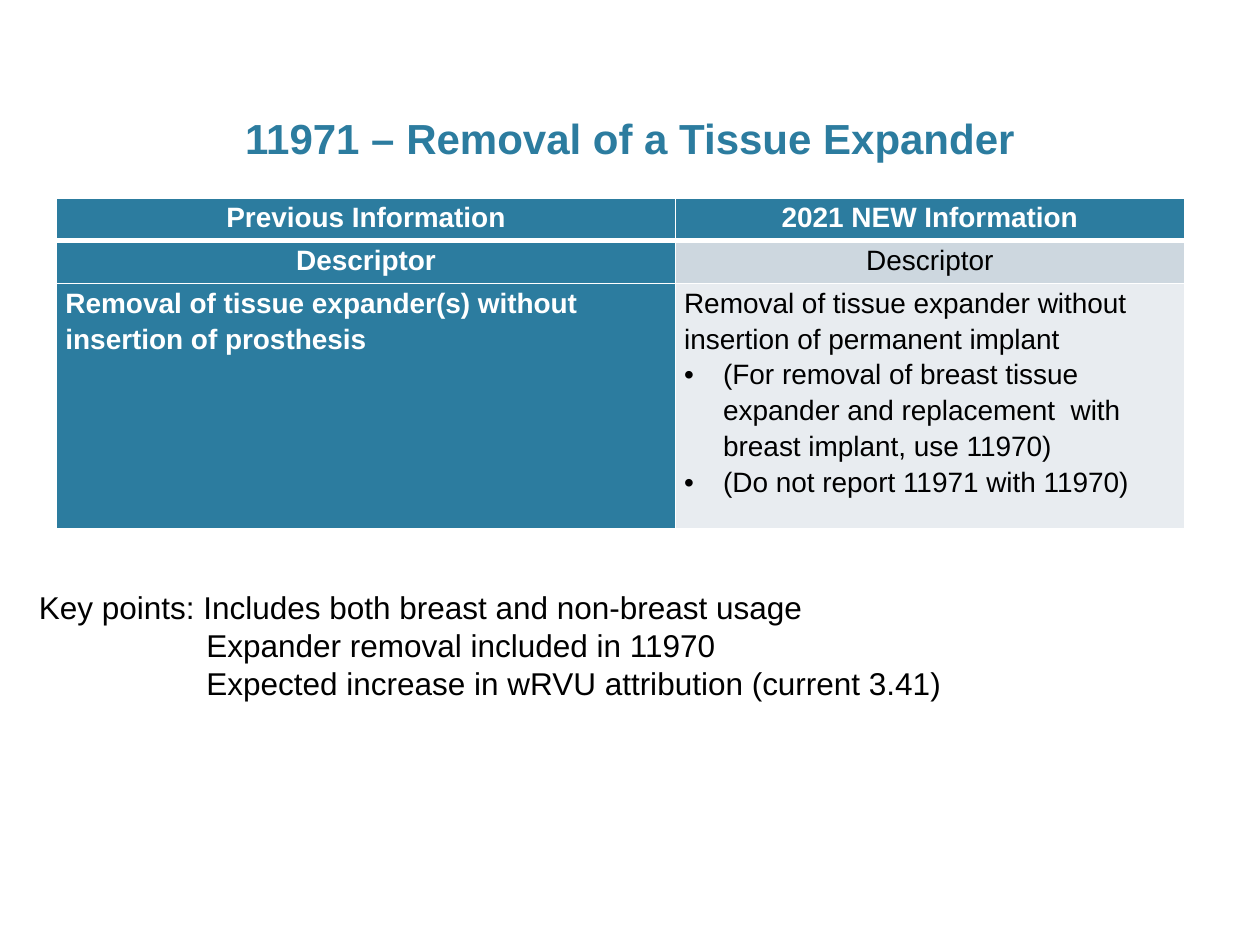
from dataclasses import dataclass

from lxml import etree
from pptx import Presentation
from pptx.dml.color import RGBColor
from pptx.enum.text import MSO_ANCHOR, PP_ALIGN
from pptx.oxml.ns import qn
from pptx.util import Inches, Pt

CENTER, LEFT = PP_ALIGN.CENTER, PP_ALIGN.LEFT
BOTTOM = MSO_ANCHOR.BOTTOM
FONT = "Arial"
COLORS = {
    "teal": "2C7C9F",
    "white": "FFFFFF",
    "black": "000000",
    "gray": "CDD7DF",
    "pale": "E8ECF0",
}
TITLE_ONLY = 5
COLUMN_WIDTHS = (4.91, 4.04)
ROW_HEIGHTS = (0.34, 0.34, 1.95)
BULLET_INDENT = 0.31
KEY_POINT_INDENT = 1.33


@dataclass
class Line:
    text: str
    bullet: bool = False


@dataclass
class CellContent:
    lines: list[Line]
    fill: str = "teal"
    color: str = "white"
    bold: bool = True
    align: PP_ALIGN = CENTER


TABLE_ROWS = [
    [
        CellContent([Line("Previous Information")]),
        CellContent([Line("2021 NEW Information")]),
    ],
    [
        CellContent([Line("Descriptor")]),
        CellContent([Line("Descriptor")], "gray", "black", False),
    ],
    [
        CellContent(
            [Line("Removal of tissue expander(s) without insertion of prosthesis")],
            align=LEFT,
        ),
        CellContent(
            [
                Line("Removal of tissue expander without insertion of permanent implant"),
                Line("(For removal of breast tissue expander and replacement  with "
                     "breast implant, use 11970)", bullet=True),
                Line("(Do not report 11971 with 11970)", bullet=True),
            ],
            "pale", "black", False, LEFT,
        ),
    ],
]
KEY_POINTS = [
    "Key points: Includes both breast and non-breast usage",
    "Expander removal included in 11970",
    "Expected increase in wRVU attribution (current 3.41)",
]


def rgb(name: str) -> RGBColor:
    return RGBColor.from_string(COLORS[name])


def add_run(paragraph, text: str, size: float, color: str, bold: bool = False) -> None:
    run = paragraph.add_run()
    run.text = text
    run.font.name = FONT
    run.font.size = Pt(size)
    run.font.bold = bold
    run.font.color.rgb = rgb(color)


def next_paragraph(text_frame, index: int):
    """Use the frame's own first paragraph, then add further ones."""
    return text_frame.add_paragraph() if index else text_frame.paragraphs[0]


def add_bullet(paragraph) -> None:
    properties = paragraph._p.get_or_add_pPr()
    properties.set("marL", str(Inches(BULLET_INDENT)))
    properties.set("indent", str(-Inches(BULLET_INDENT)))
    etree.SubElement(properties, qn("a:buFont"), typeface=FONT)
    etree.SubElement(properties, qn("a:buChar"), char="•")


def set_borders(cell, top: float, bottom: float) -> None:
    properties = cell._tc.get_or_add_tcPr()
    for tag, width in (("lnL", 1), ("lnR", 1), ("lnT", top), ("lnB", bottom)):
        border = etree.SubElement(properties, qn(f"a:{tag}"), w=str(Pt(width)))
        fill = etree.SubElement(border, qn("a:solidFill"))
        etree.SubElement(fill, qn("a:srgbClr"), val=COLORS["white"])


def fill_cell(cell, content: CellContent) -> None:
    cell.margin_left = cell.margin_right = Inches(0.07)
    cell.margin_top = cell.margin_bottom = 0
    cell.fill.solid()
    cell.fill.fore_color.rgb = rgb(content.fill)
    for index, line in enumerate(content.lines):
        paragraph = next_paragraph(cell.text_frame, index)
        if line.bullet:
            add_bullet(paragraph)
        paragraph.alignment = content.align
        paragraph.line_spacing = 1.15
        add_run(paragraph, line.text, 16, content.color, content.bold)


def add_title(slide, text: str) -> None:
    title = slide.shapes.title
    title.left, title.top = Inches(0.6), Inches(0.33)
    title.width, title.height = Inches(8.8), Inches(1.01)
    title.text_frame.vertical_anchor = BOTTOM
    paragraph = title.text_frame.paragraphs[0]
    paragraph.alignment = CENTER
    add_run(paragraph, text, 24, "teal", bold=True)


def add_comparison_table(slide) -> None:
    table = slide.shapes.add_table(
        len(ROW_HEIGHTS), len(COLUMN_WIDTHS), Inches(0.45), Inches(1.57),
        Inches(sum(COLUMN_WIDTHS)), Inches(sum(ROW_HEIGHTS)),
    ).table
    for column, width in zip(table.columns, COLUMN_WIDTHS):
        column.width = Inches(width)
    for row_index, contents in enumerate(TABLE_ROWS):
        table.rows[row_index].height = Inches(ROW_HEIGHTS[row_index])
        for column_index, content in enumerate(contents):
            cell = table.cell(row_index, column_index)
            set_borders(cell, top=3 if row_index == 1 else 1,
                        bottom=3 if row_index == 0 else 1)
            fill_cell(cell, content)


def add_key_points(slide) -> None:
    box = slide.shapes.add_textbox(Inches(0.21), Inches(4.62), Inches(9.79), Inches(1.31))
    box.text_frame.word_wrap = True
    for index, text in enumerate(KEY_POINTS):
        paragraph = next_paragraph(box.text_frame, index)
        if index:
            properties = paragraph._p.get_or_add_pPr()
            properties.set("marL", str(Inches(KEY_POINT_INDENT)))
            properties.set("indent", "0")
        add_run(paragraph, text, 18, "black")


def main() -> None:
    presentation = Presentation()
    presentation.slide_width, presentation.slide_height = Inches(10), Inches(7.5)
    slide = presentation.slides.add_slide(presentation.slide_layouts[TITLE_ONLY])
    add_key_points(slide)
    add_title(slide, "11971 – Removal of a Tissue Expander")
    add_comparison_table(slide)
    presentation.save("out.pptx")


if __name__ == "__main__":
    main()
